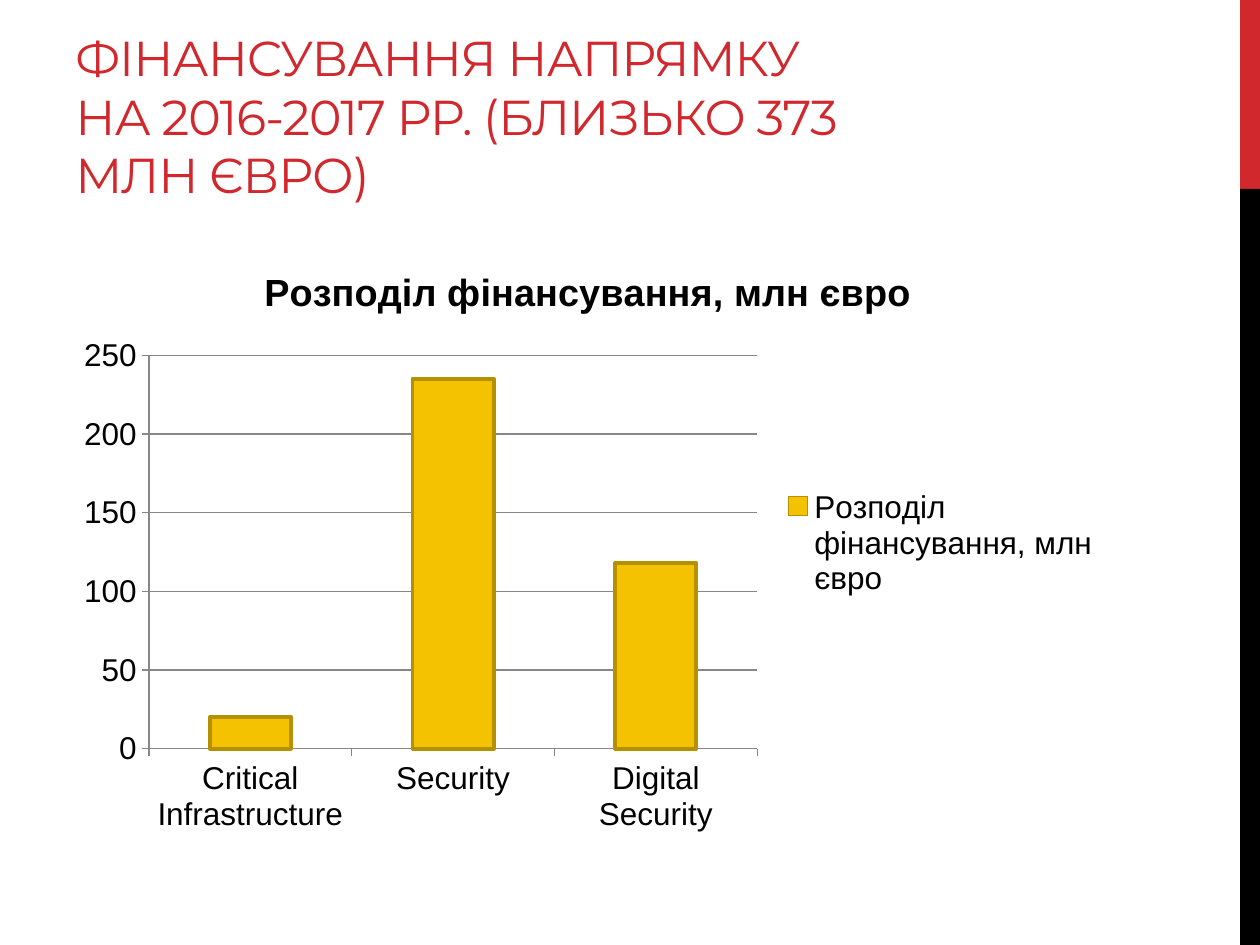
"""Build a slide on research funding with a column chart."""
import dataclasses

import pptx
import pptx.chart.chart
import pptx.chart.data
import pptx.dml.color
import pptx.enum.chart
import pptx.enum.shapes
import pptx.enum.text
import pptx.slide
import pptx.util

EMU_PER_PX = 914400 / 126
RED, BLACK, GREY = "D1282E", "000000", "878787"
GOLD, DARK_GOLD = "F5C201", "B59001"
HEADING = "ФІНАНСУВАННЯ НАПРЯМКУ НА 2016-2017 РР. (БЛИЗЬКО 373 МЛН ЄВРО)"
SERIES_NAME = "Розподіл фінансування, млн євро"
FUNDING = {"Critical Infrastructure": 20, "Security": 235, "Digital Security": 118}


@dataclasses.dataclass(frozen=True)
class Box:
    """Position and size in px."""
    left: int
    top: int
    width: int
    height: int

    def emu(self) -> tuple[int, ...]:
        """Return the box in EMU."""
        return tuple(round(length * EMU_PER_PX) for length in dataclasses.astuple(self))


@dataclasses.dataclass(frozen=True)
class Band:
    """Coloured band on the right edge."""
    box: Box
    color: str


BANDS = (
    Band(Box(1240, 0, 20, 189), RED),
    Band(Box(1240, 189, 20, 756), BLACK),
)


def rgb(color: str) -> pptx.dml.color.RGBColor:
    """Turn a hex string into a colour."""
    return pptx.dml.color.RGBColor.from_string(color)


def draw_band(slide: pptx.slide.Slide, band: Band) -> None:
    """Draw one edge band."""
    shape = slide.shapes.add_shape(pptx.enum.shapes.MSO_SHAPE.RECTANGLE, *band.box.emu())
    shape.shadow.inherit = False
    shape.fill.solid()
    shape.fill.fore_color.rgb = rgb(band.color)
    shape.line.fill.background()


def format_font(font, *, size: float, name: str = "Arial", color: str = BLACK,
                bold: bool = False) -> None:
    """Set the typeface, size, colour and weight of a font."""
    font.name = name
    font.size = pptx.util.Pt(size)
    font.bold = bold
    font.color.rgb = rgb(color)


def draw_text(slide: pptx.slide.Slide, text: str, *, box: Box, size: float, name: str,
              color: str, spacing: int) -> None:
    """Draw bottom-anchored text with letter spacing in hundredths of a point."""
    frame = slide.shapes.add_textbox(*box.emu()).text_frame
    frame.word_wrap = True
    frame.vertical_anchor = pptx.enum.text.MSO_ANCHOR.BOTTOM
    run = frame.paragraphs[0].add_run()
    run.text = text
    format_font(run.font, size=size, name=name, color=color)
    run.font._element.set("spc", str(spacing))


def format_line(line, *, color: str, width: float) -> None:
    """Set the colour and width of a line."""
    line.color.rgb = rgb(color)
    line.width = pptx.util.Pt(width)


def format_axes(chart: pptx.chart.chart.Chart) -> None:
    """Set the axis lines, ticks, scale and gridlines."""
    for axis in (chart.category_axis, chart.value_axis):
        axis.major_tick_mark = pptx.enum.chart.XL_TICK_MARK.OUTSIDE
        axis.minor_tick_mark = pptx.enum.chart.XL_TICK_MARK.NONE
        format_line(axis.format.line, color=GREY, width=0.75)
    value_axis = chart.value_axis
    value_axis.minimum_scale, value_axis.maximum_scale = 0, 250
    value_axis.major_unit = 50
    value_axis.has_major_gridlines = True
    format_line(value_axis.major_gridlines.format.line, color=GREY, width=0.75)


def draw_funding_chart(slide: pptx.slide.Slide, box: Box) -> None:
    """Draw the column chart of funding by area."""
    data = pptx.chart.data.CategoryChartData()
    data.categories = list(FUNDING)
    data.add_series(SERIES_NAME, list(FUNDING.values()))
    chart = slide.shapes.add_chart(
        pptx.enum.chart.XL_CHART_TYPE.COLUMN_CLUSTERED, *box.emu(), data).chart
    format_font(chart.font, size=18)

    chart.has_title = True
    chart.chart_title.include_in_layout = False
    title = chart.chart_title.text_frame
    title.text = SERIES_NAME
    format_font(title.paragraphs[0].runs[0].font, size=21.6, bold=True)

    chart.has_legend = True
    chart.legend.position = pptx.enum.chart.XL_LEGEND_POSITION.RIGHT
    chart.legend.include_in_layout = False
    format_axes(chart)

    plot = chart.plots[0]
    plot.gap_width = 150
    plot.vary_by_categories = False
    columns = plot.series[0].format
    columns.fill.solid()
    columns.fill.fore_color.rgb = rgb(GOLD)
    format_line(columns.line, color=DARK_GOLD, width=2.25)


def main() -> None:
    """Build and save the presentation."""
    presentation = pptx.Presentation()
    presentation.slide_width = pptx.util.Inches(10)
    presentation.slide_height = pptx.util.Inches(7.5)
    slide = presentation.slides.add_slide(presentation.slide_layouts[6])
    for band in BANDS:
        draw_band(slide, band)
    draw_text(slide, HEADING, box=Box(63, 21, 798, 189), size=28, name="Montserrat",
              color=RED, spacing=-60)
    draw_funding_chart(slide, Box(63, 242, 1050, 602))
    presentation.save("out.pptx")


if __name__ == "__main__":
    main()
